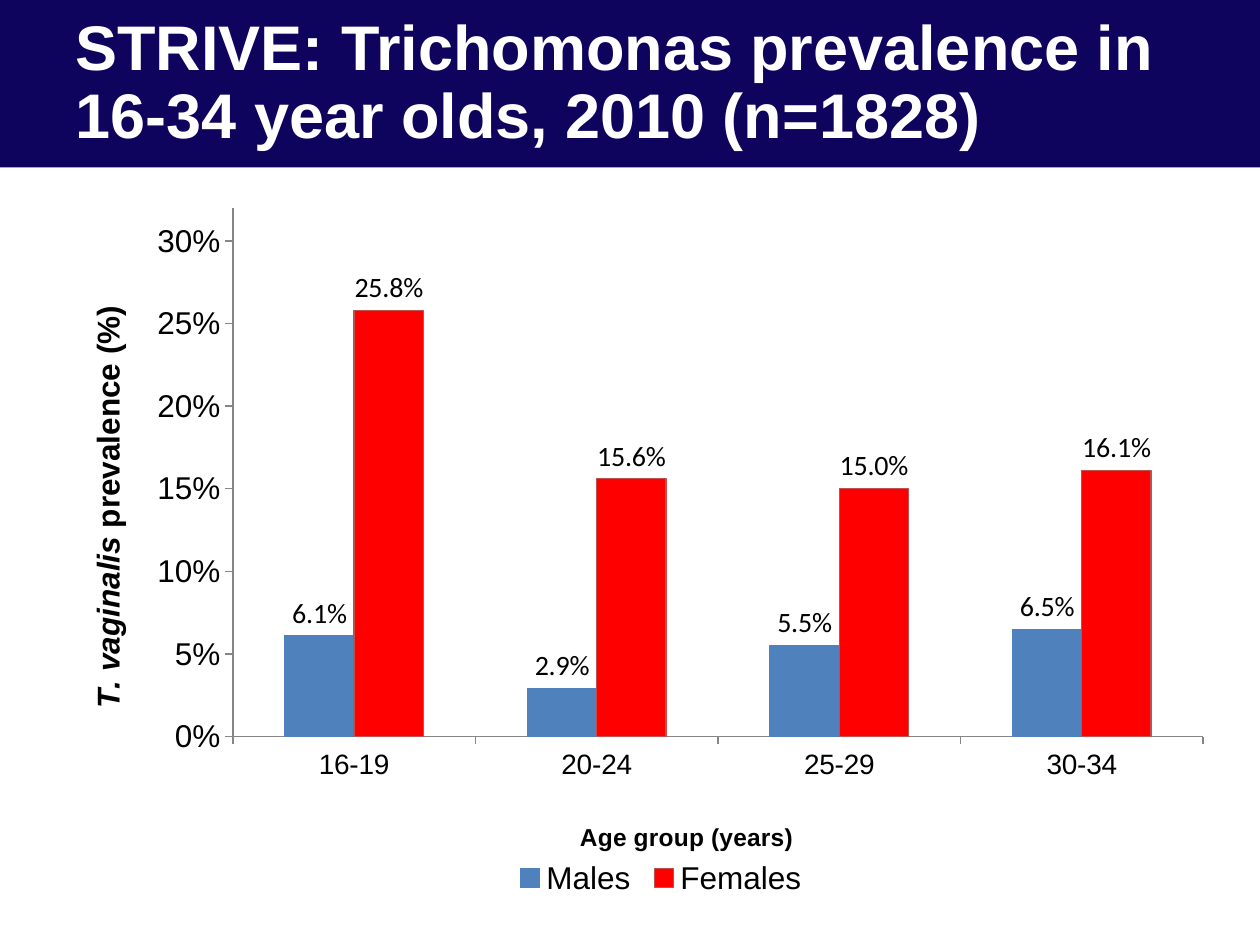
from dataclasses import dataclass

from pptx import Presentation
from pptx.chart.data import CategoryChartData
from pptx.dml.color import RGBColor
from pptx.enum.chart import XL_CHART_TYPE as ChartType
from pptx.enum.chart import XL_LABEL_POSITION as LabelPosition
from pptx.enum.chart import XL_LEGEND_POSITION as LegendPosition
from pptx.enum.chart import XL_TICK_MARK as TickMark
from pptx.enum.shapes import MSO_SHAPE as Preset
from pptx.enum.text import MSO_ANCHOR as Anchor, MSO_AUTO_SIZE as AutoSize, PP_ALIGN as Align
from pptx.oxml import parse_xml
from pptx.oxml.ns import nsdecls, qn
from pptx.util import Inches, Pt


@dataclass(frozen=True)
class Theme:
    banner: str = "0E035D"
    paper: str = "FFFFFF"
    ink: str = "000000"
    axis: str = "868686"
    males: str = "4F81BD"
    females: str = "FF0000"
    females_edge: str = "C0504D"
    heading_font: str = "Arial"
    label_font: str = "Calibri"
    heading: int = 36
    large: int = 18
    medium: int = 16
    small: int = 14
    base: int = 10


def assign(target, values):
    for name, value in values.items():
        setattr(target, name, value)


class PrevalenceSlide:
    """Draws the parts of one slide, with lengths as shares of its size."""

    def __init__(self, deck, theme):
        self.deck, self.theme = deck, theme
        self.slide = deck.slides.add_slide(deck.slide_layouts[5])

    def frame(self, left, top, width, height):
        across, down = self.deck.slide_width, self.deck.slide_height
        return {"left": int(left * across), "top": int(top * down),
                "width": int(width * across), "height": int(height * down)}

    def style(self, font, size, color=None, name=None, **extra):
        assign(font, {"size": Pt(size), "name": name or self.theme.heading_font, **extra})
        font.color.rgb = RGBColor.from_string(color or self.theme.ink)

    def banner(self, *share):
        band = self.slide.shapes.add_shape(Preset.RECTANGLE, *self.frame(*share).values())
        band.shadow.inherit = False
        band.fill.solid()
        band.fill.fore_color.rgb = RGBColor.from_string(self.theme.banner)
        band.line.fill.background()
        self.slide.shapes.title._element.addprevious(band._element)

    def title(self, wording, *share):
        heading = self.slide.shapes.title
        assign(heading, self.frame(*share))
        heading.text_frame.text = wording
        assign(heading.text_frame, {"vertical_anchor": Anchor.MIDDLE, "word_wrap": True,
                                    "auto_size": AutoSize.NONE})
        line = heading.text_frame.paragraphs[0]
        assign(line, {"alignment": Align.LEFT, "line_spacing": 0.9})
        self.style(line.runs[0].font, self.theme.heading, self.theme.paper, bold=True)

    def column_chart(self, ages, groups, *share):
        table = CategoryChartData(number_format="0.0%")
        table.categories = ages
        for group, (rates, _, _) in groups.items():
            table.add_series(group, rates)
        chart = self.slide.shapes.add_chart(
            ChartType.COLUMN_CLUSTERED, *self.frame(*share).values(), table).chart
        assign(chart, {"has_title": False, "has_legend": True})
        self.style(chart.font, self.theme.base, name=self.theme.label_font)
        assign(chart.plots[0], {"gap_width": 150, "overlap": 0, "vary_by_categories": False})
        for series, (_, fill, edge) in zip(chart.plots[0].series, groups.values()):
            self.series(series, fill, edge)
        return chart

    def series(self, series, fill, edge):
        series.format.fill.solid()
        series.format.fill.fore_color.rgb = RGBColor.from_string(fill)
        series.format.line.color.rgb = RGBColor.from_string(edge)
        series.format.line.width = Pt(0.75)
        labels = series.data_labels
        assign(labels, {"show_value": True, "number_format": "0.0%",
                        "number_format_is_linked": False,
                        "position": LabelPosition.OUTSIDE_END})
        self.style(labels.font, self.theme.medium, name=self.theme.label_font)

    def axis(self, axis, wording, title_size, tick_size, corner, **values):
        assign(axis, {"has_major_gridlines": False, "major_tick_mark": TickMark.OUTSIDE,
                      "minor_tick_mark": TickMark.NONE, **values})
        axis.format.line.color.rgb = RGBColor.from_string(self.theme.axis)
        self.style(axis.tick_labels.font, tick_size)
        caption = axis.axis_title.text_frame.paragraphs[0]
        for part, italic in wording:
            run = caption.add_run()
            run.text = part
            self.style(run.font, title_size, bold=True, italic=italic)
        self.place(axis.axis_title._element, *corner)

    def legend(self, chart, *share):
        assign(chart.legend, {"position": LegendPosition.BOTTOM, "include_in_layout": False})
        self.style(chart.legend.font, self.theme.large)
        self.place(chart.legend._element, *share)

    def place(self, element, *share, inner=False):
        target = '<c:layoutTarget val="inner"/>' if inner else ""
        modes = "".join(f'<c:{side}Mode val="edge"/>' for side in "xy")
        sizes = "".join(f'<c:{side} val="{value}"/>' for side, value in zip("xywh", share))
        layout = parse_xml(f'<c:layout {nsdecls("c")}><c:manualLayout>{target}{modes}{sizes}'
                           "</c:manualLayout></c:layout>")
        for old in element.findall(qn("c:layout")):
            element.remove(old)
        overlay = element.find(qn("c:overlay"))
        if overlay is None:
            element.insert(0, layout)
        else:
            overlay.addprevious(layout)


def main():
    theme = Theme()
    deck = Presentation()
    assign(deck, {"slide_width": Inches(10), "slide_height": Inches(7.5)})
    page = PrevalenceSlide(deck, theme)
    band = 1.33 / 7.5
    page.banner(0, 0, 1, band)
    page.title("STRIVE: Trichomonas prevalence in 16-34 year olds, 2010 (n=1828)",
               0.05, 0, 0.9, band)

    ages = ["16-19", "20-24", "25-29", "30-34"]
    groups = {
        "Males": ([0.061, 0.029, 0.055, 0.065], theme.males, theme.males),
        "Females": ([0.258, 0.156, 0.15, 0.161], theme.females, theme.females_edge),
    }
    chart = page.column_chart(ages, groups, 0.058, 1.42 / 7.5, 0.906, 5.75 / 7.5)
    page.place(chart._chartSpace.chart.plotArea, 0.14, 0.04, 0.85, 0.73, inner=True)
    page.axis(chart.category_axis, [("Age group (years)", False)],
              theme.small, theme.medium, (0.44, 0.88))
    page.axis(chart.value_axis, [("T. vaginalis", True), (" prevalence (%)", False)],
              theme.large, theme.large, (0.01, 0.17),
              minimum_scale=0, maximum_scale=0.32, major_unit=0.05)
    assign(chart.value_axis.tick_labels,
           {"number_format": "0%", "number_format_is_linked": False})
    page.legend(chart, 0.38, 0.93, 0.27, 0.07)
    deck.save("out.pptx")


if __name__ == "__main__":
    main()
